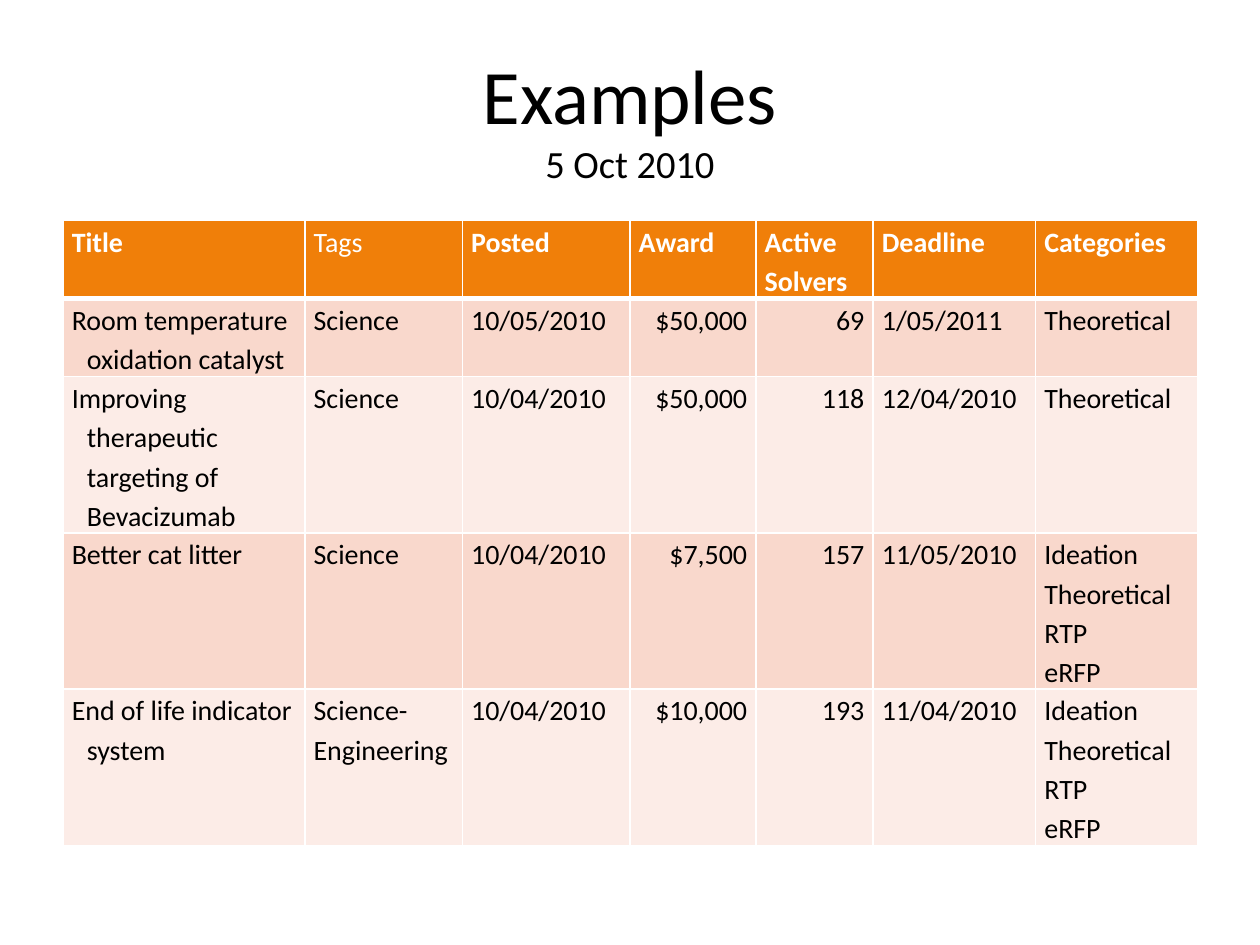
from lxml import etree
from pptx import Presentation
from pptx.dml.color import RGBColor
from pptx.enum.text import MSO_ANCHOR as Anchor, PP_ALIGN as Align
from pptx.oxml.ns import qn
from pptx.util import Inches, Pt

FONT = "Calibri"
BLACK = RGBColor(0x00, 0x00, 0x00)
WHITE = RGBColor(0xFF, 0xFF, 0xFF)
ORANGE = RGBColor(0xF0, 0x7F, 0x09)
BANDS = RGBColor(0xF9, 0xD8, 0xCC), RGBColor(0xFC, 0xEC, 0xE7)

COLUMN_WIDTHS = [1.92, 1.25, 1.33, 1, 0.93, 1.29, 1.29]
ROW_LINES = [2, 2, 4, 4, 4]
LINE_HEIGHT = 0.31
TITLE_COLUMN, TAGS_COLUMN = 0, 1
NUMBER_COLUMNS = (3, 4)

HEADINGS = ["Title", "Tags", "Posted", "Award", "Active Solvers", "Deadline", "Categories"]
ALL_CATEGORIES = "Ideation\nTheoretical\nRTP\neRFP"
CHALLENGES = [
    ["Room temperature oxidation catalyst", "Science", "10/05/2010", "$50,000", "69",
     "1/05/2011", "Theoretical"],
    ["Improving therapeutic targeting of Bevacizumab", "Science", "10/04/2010", "$50,000",
     "118", "12/04/2010", "Theoretical"],
    ["Better cat litter", "Science", "10/04/2010", "$7,500", "157", "11/05/2010",
     ALL_CATEGORIES],
    ["End of life indicator system", "Science-Engineering", "10/04/2010", "$10,000", "193",
     "11/04/2010", ALL_CATEGORIES],
]


def style_font(font, size, color, bold=False):
    font.name = FONT
    font.size = Pt(size)
    font.bold = bold
    font.color.rgb = color


def add_heading(slide, title, date):
    box = slide.shapes.add_textbox(Inches(0.5), Inches(0.3), Inches(9), Inches(1.25))
    frame = box.text_frame
    frame.word_wrap = True
    frame.vertical_anchor = Anchor.MIDDLE
    paragraph = frame.paragraphs[0]
    paragraph.alignment = Align.CENTER
    title_run = paragraph.add_run()
    title_run.text = title
    style_font(title_run.font, 44, BLACK)
    paragraph.add_line_break()
    date_run = paragraph.add_run()
    date_run.text = date
    style_font(date_run.font, 22, BLACK)


def set_borders(cell, bottom_width):
    properties = cell._tc.get_or_add_tcPr()
    for side, width in (("L", 1), ("R", 1), ("T", 1), ("B", bottom_width)):
        line = etree.SubElement(properties, qn(f"a:ln{side}"), w=str(Pt(width)))
        fill = etree.SubElement(line, qn("a:solidFill"))
        etree.SubElement(fill, qn("a:srgbClr"), val=str(WHITE))


def fill_cell(cell, text, fill, color, bold=False, align=Align.LEFT, hanging=False,
              bottom_width=1):
    set_borders(cell, bottom_width)
    cell.fill.solid()
    cell.fill.fore_color.rgb = fill
    cell.margin_left = cell.margin_right = Inches(0.07)
    cell.margin_top = cell.margin_bottom = 0
    cell.text_frame.text = text
    for paragraph in cell.text_frame.paragraphs:
        paragraph.alignment = align
        paragraph.line_spacing = 1.15
        style_font(paragraph.font, 16, color, bold)
        if hanging:
            indent = Inches(0.12)
            properties = paragraph._p.get_or_add_pPr()
            properties.set("marL", str(indent))
            properties.set("indent", str(-indent))


def add_challenge_table(slide):
    frame = slide.shapes.add_table(
        len(ROW_LINES), len(COLUMN_WIDTHS), Inches(0.5), Inches(1.75),
        Inches(sum(COLUMN_WIDTHS)), Inches(LINE_HEIGHT * sum(ROW_LINES)))
    table = frame.table
    for column, width in zip(table.columns, COLUMN_WIDTHS):
        column.width = Inches(width)
    for row, lines in zip(table.rows, ROW_LINES):
        row.height = Inches(LINE_HEIGHT * lines)

    # Header row
    for c, heading in enumerate(HEADINGS):
        fill_cell(table.cell(0, c), heading, ORANGE, WHITE, bold=c != TAGS_COLUMN,
                  bottom_width=3)

    # Banded body rows
    for r, challenge in enumerate(CHALLENGES):
        for c, text in enumerate(challenge):
            fill_cell(table.cell(r + 1, c), text, BANDS[r % 2], BLACK,
                      align=Align.RIGHT if c in NUMBER_COLUMNS else Align.LEFT,
                      hanging=c == TITLE_COLUMN)


def main():
    deck = Presentation()
    deck.slide_width, deck.slide_height = Inches(10), Inches(7.5)
    slide = deck.slides.add_slide(deck.slide_layouts[6])
    add_heading(slide, "Examples", "5 Oct 2010")
    add_challenge_table(slide)
    deck.save("out.pptx")


if __name__ == "__main__":
    main()
